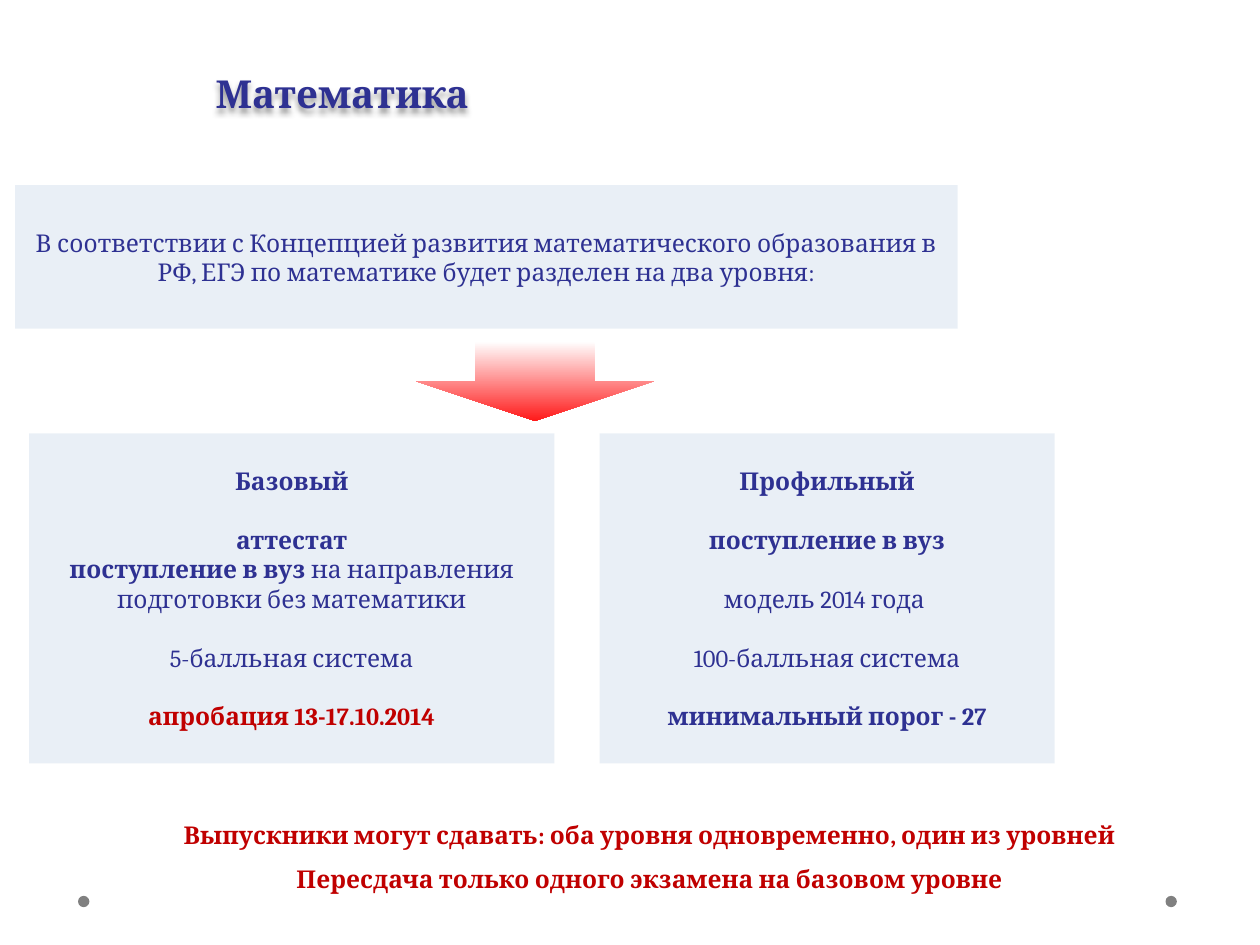
from lxml.etree import SubElement
from pptx import Presentation
from pptx.dml.color import RGBColor
from pptx.enum.shapes import MSO_SHAPE
from pptx.enum.text import MSO_ANCHOR, MSO_AUTO_SIZE, PP_ALIGN
from pptx.oxml.ns import qn
from pptx.util import Pt

COLOURS = {
    "navy": "2E3192",
    "red": "C00000",
    "panel": "B9CDE5",
    "dot": "808080",
    "arrow_start": "FFFFFF",
    "arrow_end": "FF1A1A",
}
FONT = "Cambria"
TEXT_SIZE = 14
LINE_GAP = 16.8

INTRO = [
    (0, [("В соответствии с Концепцией развития математического образования в РФ, "
          "ЕГЭ по математике будет разделен на два уровня:", False, "navy")]),
]
BASIC_LEVEL = [
    (0, [("Базовый", True, "navy")]),
    (LINE_GAP, [("аттестат", True, "navy")]),
    (0, [("поступление в вуз ", True, "navy"),
         ("на направления подготовки без математики", False, "navy")]),
    (LINE_GAP, [("5-балльная система", False, "navy")]),
    (LINE_GAP, [("апробация 13-17.10.2014", True, "red")]),
]
PROFILE_LEVEL = [
    (0, [("Профильный", True, "navy")]),
    (LINE_GAP, [("поступление в вуз", True, "navy")]),
    (LINE_GAP, [("модель 2014 года ", False, "navy")]),
    (LINE_GAP, [("100-балльная система", False, "navy")]),
    (LINE_GAP, [("минимальный порог - 27", True, "navy")]),
]
NOTES = [
    "Выпускники могут сдавать: оба уровня одновременно, один из уровней",
    "Пересдача только одного экзамена на базовом уровне",
]


def colour(name):
    return RGBColor.from_string(COLOURS[name])


def format_run(run, size, bold, colour_name):
    run.font.name = FONT
    run.font.size = Pt(size)
    run.font.bold = bold
    run.font.color.rgb = colour(colour_name)


def place(shape, left, top, width, height):
    shape.left, shape.top = Pt(left), Pt(top)
    shape.width, shape.height = Pt(width), Pt(height)


def add_plain_shape(slide, kind, left, top, width, height):
    shape = slide.shapes.add_shape(kind, Pt(left), Pt(top), Pt(width), Pt(height))
    shape.shadow.inherit = False
    shape.line.fill.background()
    return shape


def add_dot(slide, left):
    dot = add_plain_shape(slide, MSO_SHAPE.OVAL, left, 511.9, 6.5, 6.5)
    dot.fill.solid()
    dot.fill.fore_color.rgb = colour("dot")


def add_panel(slide, bounds, paragraphs):
    panel = add_plain_shape(slide, MSO_SHAPE.RECTANGLE, *bounds)
    panel.fill.solid()
    panel.fill.fore_color.rgb = colour("panel")
    fill_colour = panel.fill._xPr.find(qn("a:solidFill"))[0]
    SubElement(fill_colour, qn("a:alpha"), val="31000")
    text_frame = panel.text_frame
    text_frame.word_wrap = True
    text_frame.vertical_anchor = MSO_ANCHOR.MIDDLE
    for index, (space_before, pieces) in enumerate(paragraphs):
        paragraph = text_frame.paragraphs[0] if index == 0 else text_frame.add_paragraph()
        paragraph.alignment = PP_ALIGN.CENTER
        if space_before:
            paragraph.space_before = Pt(space_before)
        for text, bold, colour_name in pieces:
            run = paragraph.add_run()
            run.text = text
            format_run(run, TEXT_SIZE, bold, colour_name)


def add_arrow(slide):
    arrow = add_plain_shape(slide, MSO_SHAPE.DOWN_ARROW, 237.6, 195.1, 136.1, 45.4)
    arrow.fill.gradient()
    arrow.fill.gradient_angle = 270
    for stop, name, position in zip(arrow.fill.gradient_stops,
                                    ("arrow_start", "arrow_end"), (0, 1)):
        stop.color.rgb = colour(name)
        stop.position = position


def add_text_shadow(shape):
    effects = SubElement(shape._element.spPr, qn("a:effectLst"))
    shadow = SubElement(effects, qn("a:outerShdw"), blurRad="38100", dist="38100",
                        dir="5400000", algn="t", rotWithShape="0")
    shadow_colour = SubElement(shadow, qn("a:srgbClr"), val="000000")
    SubElement(shadow_colour, qn("a:alpha"), val="40000")


def fill_title(title):
    place(title, 116, 36, 590, 34)
    title.text_frame.text = "Математика"
    title.text_frame.auto_size = MSO_AUTO_SIZE.NONE
    title.text_frame.vertical_anchor = MSO_ANCHOR.MIDDLE
    paragraph = title.text_frame.paragraphs[0]
    paragraph.alignment = PP_ALIGN.LEFT
    format_run(paragraph.runs[0], 22, True, "navy")
    add_text_shadow(title)


def fill_notes(body):
    place(body, 31, 466.6, 680.4, 60.5)
    text_frame = body.text_frame
    text_frame.text = "\n".join(NOTES)
    text_frame.auto_size = MSO_AUTO_SIZE.NONE
    text_frame.vertical_anchor = MSO_ANCHOR.TOP
    for index, paragraph in enumerate(text_frame.paragraphs):
        properties = paragraph._p.get_or_add_pPr()
        properties.set("marL", "0")
        properties.set("indent", "0")
        SubElement(properties, qn("a:buNone"))
        paragraph.alignment = PP_ALIGN.CENTER
        paragraph.line_spacing = 0.9
        paragraph.space_before = Pt(10 if index else 0)
        format_run(paragraph.runs[0], TEXT_SIZE, True, "red")


def main():
    presentation = Presentation()
    presentation.slide_width, presentation.slide_height = Pt(720), Pt(540)
    slide = presentation.slides.add_slide(presentation.slide_layouts[1])
    fill_title(slide.shapes.title)
    fill_notes(slide.placeholders[1])
    for left in (44.6, 666):
        add_dot(slide, left)
    add_panel(slide, (16.6, 247.7, 300.2, 188.6), BASIC_LEVEL)
    add_panel(slide, (342.7, 247.7, 259.9, 188.6), PROFILE_LEVEL)
    add_arrow(slide)
    add_panel(slide, (8.6, 105.8, 538.6, 82.1), INTRO)
    presentation.save("out.pptx")


if __name__ == "__main__":
    main()
